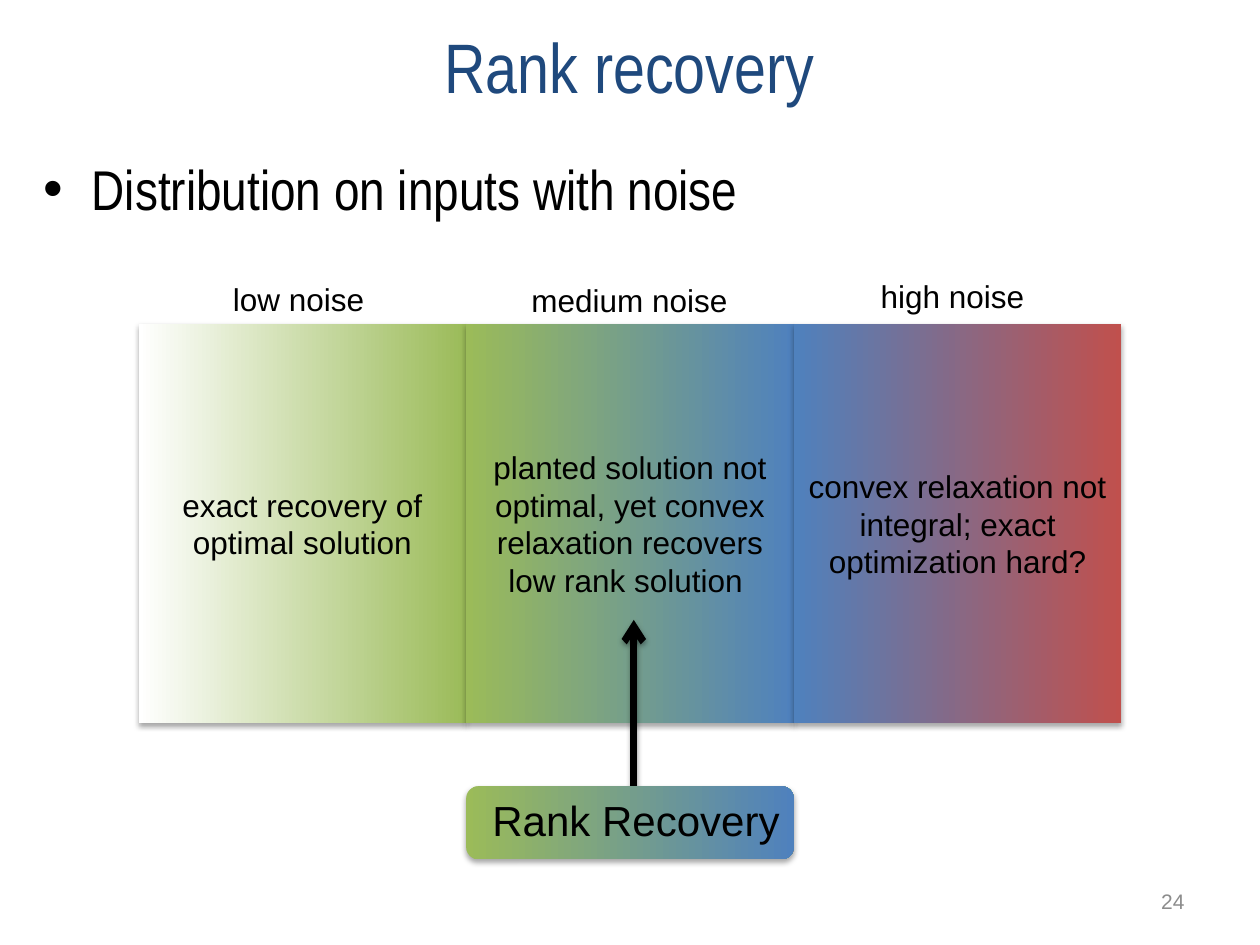
from dataclasses import dataclass

from lxml.etree import SubElement
from pptx import Presentation
from pptx.dml.color import RGBColor as RGB
from pptx.enum.shapes import MSO_CONNECTOR as CONN, MSO_SHAPE as SHAPE
from pptx.enum.text import MSO_ANCHOR as ANCHOR, MSO_AUTO_SIZE as AUTO, PP_ALIGN as ALIGN
from pptx.oxml.ns import qn
from pptx.util import Inches, Pt


@dataclass(frozen=True)
class Theme:
    title: str = "1F497D"
    ink: str = "000000"
    muted: str = "8C8C8C"
    white: str = "FFFFFF"
    green: str = "9BBB59"
    blue: str = "4F81BD"
    red: str = "C0504D"
    heading: str = "Arial Narrow"
    body: str = "Arial"
    title_size: int = 40
    bullet_size: int = 32
    callout_size: int = 24
    text_size: int = 18
    number_size: int = 12


class SlideBuilder:
    """Draws styled elements on one slide."""

    def __init__(self, slide, theme):
        self.slide, self.theme = slide, theme

    def add_run(self, tf, text, size, align=ALIGN.LEFT, color=None, font=None):
        p = tf.paragraphs[0]
        p.alignment = align
        r = p.add_run()
        r.text = text
        r.font.size = Pt(size)
        r.font.name = font or self.theme.body
        r.font.color.rgb = RGB.from_string(color or self.theme.ink)
        return p

    def text(self, box, text, size, anchor=ANCHOR.TOP, wrap=True, **style):
        tf = self.slide.shapes.add_textbox(*map(Inches, box)).text_frame
        tf.word_wrap = wrap
        tf.auto_size = AUTO.NONE if wrap else AUTO.SHAPE_TO_FIT_TEXT
        tf.vertical_anchor = anchor
        return self.add_run(tf, text, size, **style)

    def bullet(self, box, text):
        p = self.text(box, text, self.theme.bullet_size, font=self.theme.heading)
        p.space_before = Pt(6.4)
        pPr = p._p.get_or_add_pPr()
        pPr.set("marL", str(Inches(0.38)))
        pPr.set("indent", str(-Inches(0.38)))
        SubElement(pPr, qn("a:buFont"), typeface=self.theme.body)
        SubElement(pPr, qn("a:buChar"), char="•")

    def shadow(self, effects, alpha, dist):
        shadow = SubElement(effects, qn("a:outerShdw"), blurRad=str(Pt(3.1)),
                            dist=str(Pt(dist)), dir="5400000", rotWithShape="0")
        color = SubElement(shadow, qn("a:srgbClr"), val=self.theme.ink)
        SubElement(color, qn("a:alpha"), val=str(alpha * 1000))

    def gradient_box(self, kind, box, colors, text=None):
        sp = self.slide.shapes.add_shape(kind, *map(Inches, box))
        sp.fill.gradient()
        sp.fill.gradient_angle = 0
        for stop, color in zip(sp.fill.gradient_stops, colors):
            stop.color.rgb = RGB.from_string(color)
        sp.line.fill.background()
        sp.shadow.inherit = False
        self.shadow(sp._element.spPr.find(qn("a:effectLst")), 35, 1.8)
        if text:
            sp.text_frame.word_wrap = True
            sp.text_frame.vertical_anchor = ANCHOR.MIDDLE
            self.add_run(sp.text_frame, text, self.theme.text_size, ALIGN.CENTER)

    def arrow(self, start, end):
        cxn = self.slide.shapes.add_connector(CONN.STRAIGHT, *map(Inches, start + end))
        cxn.line.color.rgb = RGB.from_string(self.theme.ink)
        cxn.line.width = Pt(4)
        SubElement(cxn.line._get_or_add_ln(), qn("a:tailEnd"), type="arrow")
        self.shadow(SubElement(cxn._element.spPr, qn("a:effectLst")), 38, 1.6)


def main():
    prs = Presentation()
    prs.slide_width, prs.slide_height = Inches(10), Inches(7.5)
    t = Theme()
    s = SlideBuilder(prs.slides.add_slide(prs.slide_layouts[6]), t)

    s.text((0.25, 0.1, 9.49, 0.84), "Rank recovery", t.title_size, ANCHOR.MIDDLE,
           align=ALIGN.CENTER, color=t.title, font=t.heading)
    s.bullet((0.25, 1.18, 9.49, 5.52), "Distribution on inputs with noise")
    s.text((7.17, 6.95, 2.33, 0.4), "24", t.number_size, ANCHOR.MIDDLE,
           align=ALIGN.RIGHT, color=t.muted)

    left, top, width, height = 1.1, 2.57, 2.6, 3.17
    scale = (t.white, t.green, t.blue, t.red)
    regimes = (
        ("low noise", (1.75, 2.17, 1.25, 0.4), "exact recovery of optimal solution"),
        ("medium noise", (4.12, 2.18, 1.77, 0.4),
         "planted solution not optimal, yet convex relaxation recovers low rank solution "),
        ("high noise", (6.89, 2.15, 1.35, 0.4),
         "convex relaxation not integral; exact optimization hard?"),
    )
    for i, (label, label_box, outcome) in enumerate(regimes):
        s.gradient_box(SHAPE.RECTANGLE, (left + i * width, top, width, height),
                       scale[i:i + 2], outcome)
        s.text(label_box, label, t.text_size, wrap=False)

    s.arrow((5.03, 6.24), (5.03, 4.92))
    s.gradient_box(SHAPE.ROUNDED_RECTANGLE, (left + width, 6.24, width, 0.58), scale[1:3])
    s.text((3.81, 6.26, 2.5, 0.5), "Rank Recovery", t.callout_size, wrap=False)

    prs.save("out.pptx")


if __name__ == "__main__":
    main()
